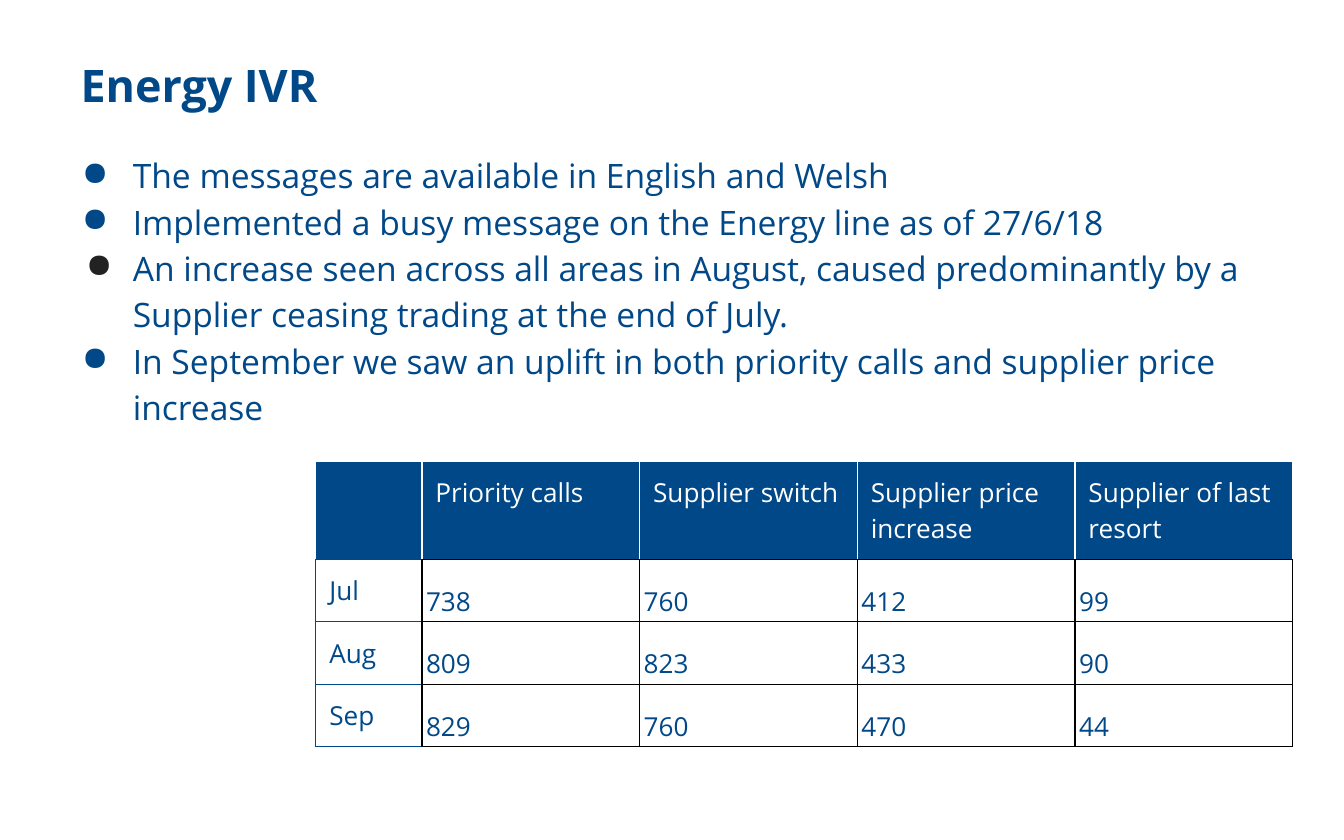
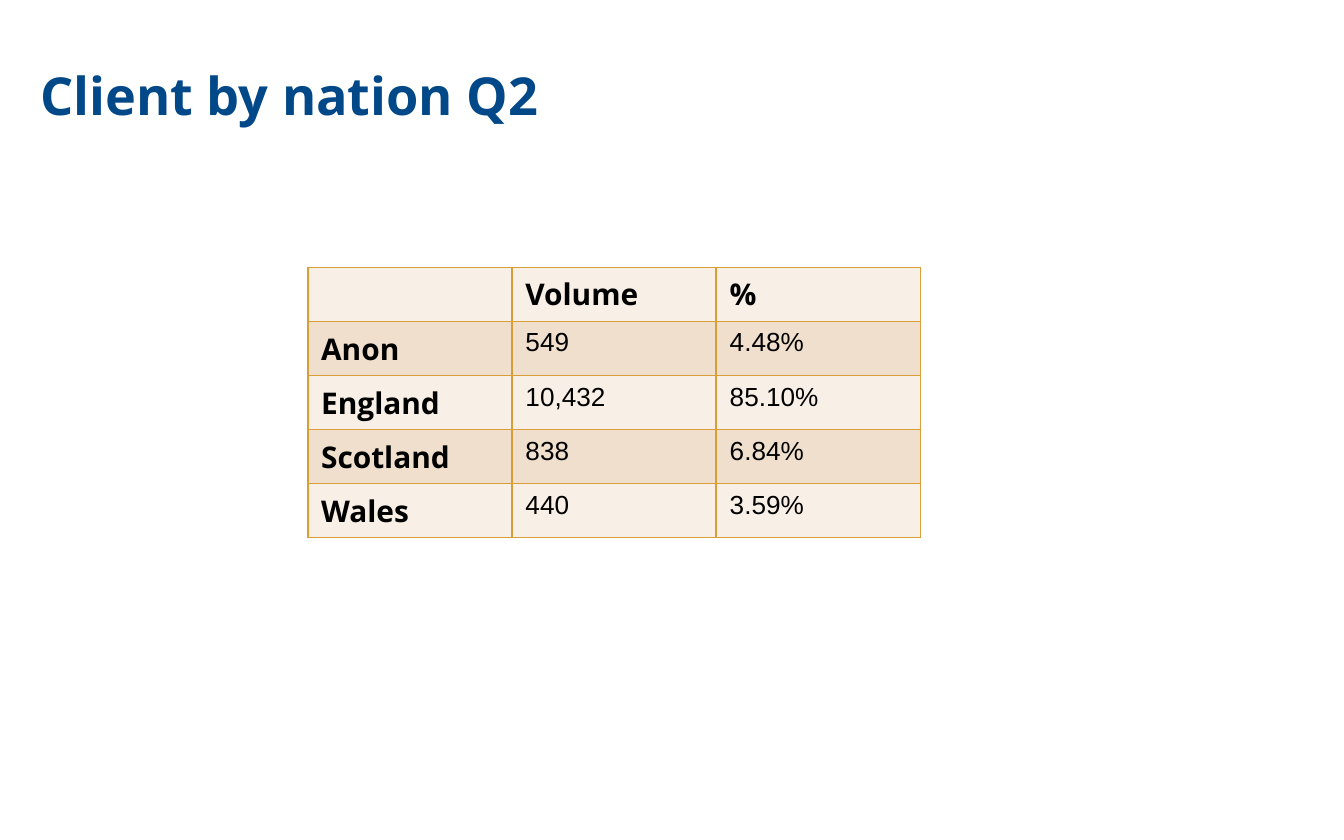
"""Build two slides on energy calls and clients by nation."""
from dataclasses import dataclass

from lxml.etree import SubElement
from pptx import Presentation
from pptx.dml.color import RGBColor
from pptx.enum.text import MSO_ANCHOR, MSO_AUTO_SIZE, PP_ALIGN
from pptx.oxml.ns import qn
from pptx.slide import Slide
from pptx.table import Table, _Cell
from pptx.text.text import TextFrame, _Paragraph
from pptx.util import Inches, Pt

NAVY = RGBColor(0x00, 0x48, 0x88)
INK = RGBColor(0x22, 0x22, 0x22)
BLACK = RGBColor(0x00, 0x00, 0x00)
WHITE = RGBColor(0xFF, 0xFF, 0xFF)
GOLD = RGBColor(0xD8, 0x9F, 0x39)
CREAM = RGBColor(0xF8, 0xEF, 0xE7)
SAND = RGBColor(0xF0, 0xDF, 0xCC)
SANS = "Open Sans"
ARIAL = "Arial"
SIDES = ("L", "R", "T", "B")


@dataclass(frozen=True)
class Style:
    size: int
    color: RGBColor
    font: str = SANS
    bold: bool = False


@dataclass(frozen=True)
class Point:
    text: str
    hang: float = 0.38
    dot: RGBColor = NAVY


@dataclass(frozen=True)
class Look:
    style: Style
    edges: tuple[RGBColor, RGBColor, RGBColor, RGBColor]
    width: float
    pad: tuple[float, float]
    fill: RGBColor | None = None
    low: bool = False


@dataclass(frozen=True)
class Grid:
    left: float
    top: float
    cols: tuple[float, ...]
    rows: tuple[float, ...]
    data: tuple[tuple[str, ...], ...]


POINTS = (
    Point("The messages are available in English and Welsh"),
    Point("Implemented a busy message on the Energy line as of 27/6/18"),
    Point("An increase seen across all areas in August, caused predominantly "
          "by a Supplier ceasing trading at the end of July.", 0.35, INK),
    Point("In September we saw an uplift in both priority calls and "
          "supplier price increase"),
)
CALLS = Grid(2.35, 3.43, (0.79,) + (1.62,) * 4, (0.6,) + (0.39,) * 3, (
    ("", "Priority calls", "Supplier switch", "Supplier price increase",
     "Supplier of last resort"),
    ("Jul", "738", "760", "412", "99"),
    ("Aug", "809", "823", "433", "90"),
    ("Sep", "829", "760", "470", "44"),
))
NATIONS = Grid(2.29, 1.99, (1.52,) * 3, (0.39,) * 5, (
    ("", "Volume", "%"),
    ("Anon", "549", "4.48%"),
    ("England", "10,432", "85.10%"),
    ("Scotland", "838", "6.84%"),
    ("Wales", "440", "3.59%"),
))


def write(para: _Paragraph, text: str, style: Style) -> None:
    """Add one styled run to a paragraph."""
    run = para.add_run()
    run.text = text
    font = run.font
    font.name = style.font
    font.size = Pt(style.size)
    font.bold = style.bold
    font.color.rgb = style.color


def frame(box: TextFrame, pad: float = 0.1) -> None:
    """Wrap a text frame, anchor it at the top and pad it."""
    box.word_wrap = True
    box.auto_size = MSO_AUTO_SIZE.NONE
    box.vertical_anchor = MSO_ANCHOR.TOP
    box.margin_left = box.margin_right = box.margin_bottom = Inches(0.1)
    box.margin_top = Inches(pad)


def start(deck: Presentation, title: str, left: float, top: float,
          size: int) -> Slide:
    """Add a title-only slide and format its title."""
    slide = deck.slides.add_slide(deck.slide_layouts[5])
    head = slide.shapes.title
    head.left, head.top = Inches(left), Inches(top)
    head.width, head.height = Inches(9), Inches(1.04)
    frame(head.text_frame)
    para = head.text_frame.paragraphs[0]
    para.alignment = PP_ALIGN.LEFT
    write(para, title, Style(size, NAVY, bold=True))
    return slide


def bullet(para: _Paragraph, point: Point) -> None:
    """Give a paragraph a coloured dot and a hanging indent."""
    props = para._p.get_or_add_pPr()
    props.set("marL", str(Inches(0.5)))
    props.set("indent", str(-Inches(point.hang)))
    tint = SubElement(props, qn("a:buClr"))
    SubElement(tint, qn("a:srgbClr"), val=str(point.dot))
    SubElement(props, qn("a:buChar"), char="●")


def listing(slide: Slide) -> None:
    """Write the bullet list."""
    box = slide.shapes.add_textbox(
        Inches(0.39), Inches(0.98), Inches(9.3), Inches(4.29)).text_frame
    frame(box, 0.13)
    for i, point in enumerate(POINTS):
        para = box.add_paragraph() if i else box.paragraphs[0]
        bullet(para, point)
        para.line_spacing = 1.15
        write(para, point.text, Style(18, NAVY))


def paint(cell: _Cell, text: str, look: Look) -> None:
    """Fill in a cell with its borders, colour and text."""
    props = cell._tc.get_or_add_tcPr()
    for side, color in zip(SIDES, look.edges):
        line = SubElement(props, qn(f"a:ln{side}"), w=str(Pt(look.width)))
        solid = SubElement(line, qn("a:solidFill"))
        SubElement(solid, qn("a:srgbClr"), val=str(color))
    if look.fill is None:
        cell.fill.background()
    else:
        cell.fill.solid()
        cell.fill.fore_color.rgb = look.fill
    wide, high = look.pad
    cell.margin_left = cell.margin_right = Inches(wide)
    cell.margin_top = cell.margin_bottom = Inches(high)
    cell.vertical_anchor = MSO_ANCHOR.BOTTOM if look.low else MSO_ANCHOR.TOP
    para = cell.text_frame.paragraphs[0]
    if look.low:
        para.line_spacing = 1.15
    if text:
        write(para, text, look.style)
    else:
        para.font.size = Pt(look.style.size)


def call_look(row: int, col: int) -> Look:
    """Choose the look of a cell in the calls table."""
    if row == 0:
        base = BLACK if col else NAVY
        return Look(Style(14, WHITE), (WHITE, WHITE, WHITE, base), 0.75,
                    (0.1, 0.1), NAVY)
    style = Style(14, NAVY)
    if col == 0:
        return Look(style, (NAVY, BLACK, NAVY, NAVY), 0.75, (0.1, 0.1))
    return Look(style, (BLACK,) * 4, 0.75, (0.03, 0.02), low=True)


def nation_look(row: int, col: int) -> Look:
    """Choose the look of a cell in the nations table."""
    label = row == 0 or col == 0
    style = Style(16, BLACK, bold=True) if label else Style(14, BLACK, ARIAL)
    return Look(style, (GOLD,) * 4, 1, (0.1, 0.05), SAND if row % 2 else CREAM)


def tabulate(slide: Slide, grid: Grid, choose: callable) -> Table:
    """Draw a table, choosing each cell's look by row and column."""
    table = slide.shapes.add_table(
        len(grid.rows), len(grid.cols), Inches(grid.left), Inches(grid.top),
        Inches(sum(grid.cols)), Inches(sum(grid.rows))).table
    table.first_row = table.horz_banding = False
    for col, width in zip(table.columns, grid.cols):
        col.width = Inches(width)
    for row, height in zip(table.rows, grid.rows):
        row.height = Inches(height)
    for r, texts in enumerate(grid.data):
        for c, text in enumerate(texts):
            paint(table.cell(r, c), text, choose(r, c))
    return table


def main() -> None:
    """Build and save the deck."""
    deck = Presentation()
    deck.slide_width, deck.slide_height = Inches(10), Inches(6.25)
    energy = start(deck, "Energy IVR", 0.5, 0.33, 24)
    listing(energy)
    tabulate(energy, CALLS, call_look)
    client = start(deck, "Client by nation Q2", 0.2, 0.37, 28)
    tabulate(client, NATIONS, nation_look)
    deck.save("out.pptx")


if __name__ == "__main__":
    main()
